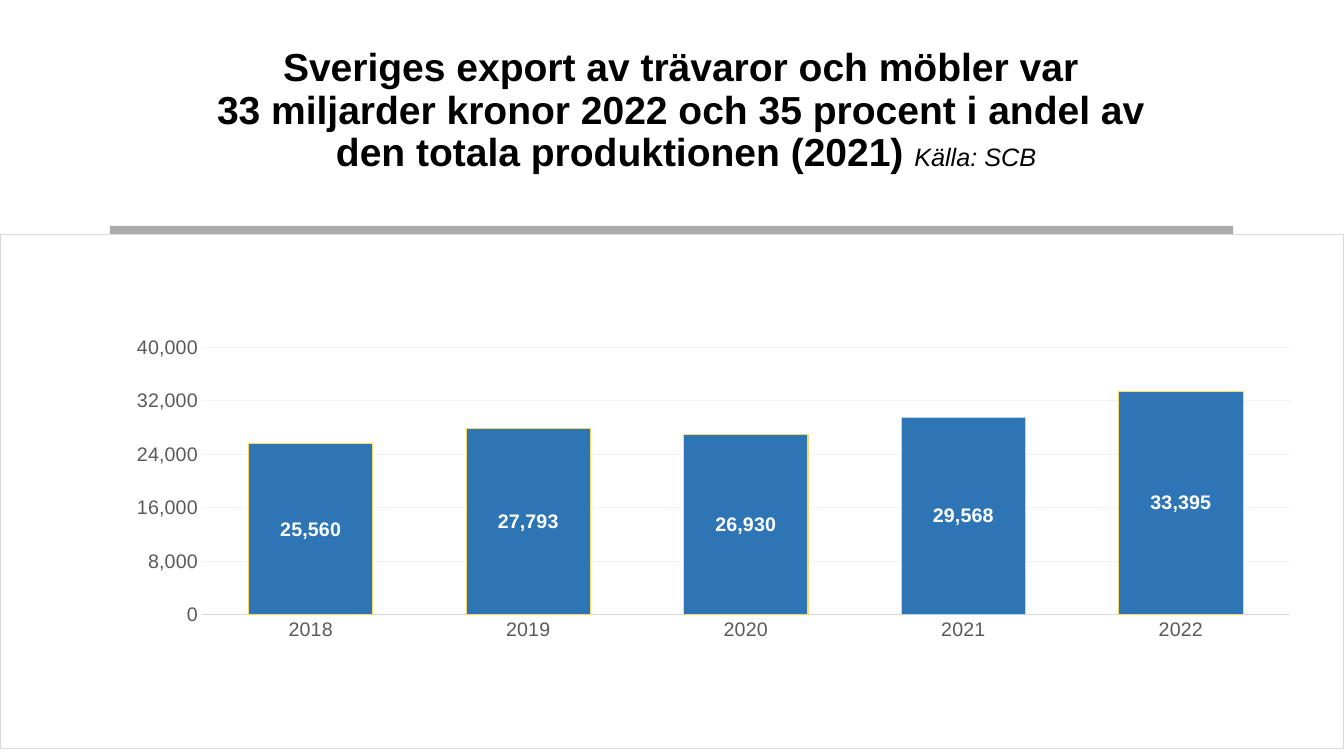
"""Build a slide on Swedish exports of wood products and furniture, 2018-2022."""
from lxml import etree
from pptx import Presentation
from pptx.chart.data import CategoryChartData
from pptx.dml.color import RGBColor
from pptx.enum.chart import XL_CHART_TYPE, XL_LABEL_POSITION, XL_TICK_MARK
from pptx.enum.shapes import MSO_SHAPE
from pptx.enum.text import MSO_ANCHOR, PP_ALIGN
from pptx.oxml import parse_xml
from pptx.oxml.ns import nsdecls, qn
from pptx.util import Inches, Pt

COLUMNS = XL_CHART_TYPE.COLUMN_CLUSTERED
CENTER_LABEL = XL_LABEL_POSITION.CENTER
NO_TICK = XL_TICK_MARK.NONE
RECTANGLE = MSO_SHAPE.RECTANGLE
MIDDLE = MSO_ANCHOR.MIDDLE
CENTER = PP_ALIGN.CENTER

FONT = "Arial"
COLORS = {
    "black": "000000",
    "white": "FFFFFF",
    "rule": "808080",
    "label": "595959",
    "border": "D9D9D9",
    "grid": "F2F2F2",
    "bar": "2E75B6",
    "bar_line": "FFD966",
    "bar_line_2021": "BDD7EE",
}
EXPORTS = {"2018": 25560, "2019": 27793, "2020": 26930, "2021": 29568, "2022": 33395}
PLOT_SHARES = {"x": 0.15, "y": 0.22, "w": 0.81, "h": 0.52}


def format_font(font, size, color, bold=False, italic=False):
    font.name = FONT
    font.size = Pt(size)
    font.bold = bold
    font.italic = italic
    font.color.rgb = RGBColor.from_string(COLORS[color])


def format_line(line, color):
    line.color.rgb = RGBColor.from_string(COLORS[color])
    line.width = Pt(0.75)


presentation = Presentation()
presentation.slide_width = Inches(13.33)
presentation.slide_height = Inches(7.5)
width = presentation.slide_width
slide = presentation.slides.add_slide(presentation.slide_layouts[6])

title_box = slide.shapes.add_textbox(Inches(1.09), Inches(0.38), Inches(11.43), Inches(1.45))
title_frame = title_box.text_frame
title_frame.word_wrap = True
title_frame.vertical_anchor = MIDDLE
title = title_frame.paragraphs[0]
title.alignment = CENTER
title.line_spacing = 0.9
title_lines = [
    "Sveriges export av trävaror och möbler var ",
    "33 miljarder kronor 2022 och 35 procent i andel av ",
    "den totala produktionen (2021) ",
]
for number, line_text in enumerate(title_lines):
    if number:
        title.add_line_break()
    run = title.add_run()
    run.text = line_text
    format_font(run.font, 27.9, "black", bold=True)
source = title.add_run()
source.text = "Källa: SCB"
format_font(source.font, 18, "black", italic=True)

rule = slide.shapes.add_shape(RECTANGLE, Inches(1.09), Inches(2.24), Inches(11.14), Inches(0.09))
rule.shadow.inherit = False
rule.line.fill.background()
rule.fill.solid()
rule.fill.fore_color.rgb = RGBColor.from_string(COLORS["rule"])
rule_color = rule.fill._xPr.find(".//" + qn("a:srgbClr"))
etree.SubElement(rule_color, qn("a:alpha"), val="65000")

chart_data = CategoryChartData(number_format="#,##0")
chart_data.categories = list(EXPORTS)
chart_data.add_series("Series 1", list(EXPORTS.values()))
chart = slide.shapes.add_chart(
    COLUMNS, 0, Inches(2.32), width, Inches(5.11), chart_data
).chart
chart.has_title = False
chart.has_legend = False
format_font(chart.font, 9, "black")

for axis in (chart.category_axis, chart.value_axis):
    axis.major_tick_mark = NO_TICK
    axis.minor_tick_mark = NO_TICK
    format_font(axis.tick_labels.font, 14, "label")
format_line(chart.category_axis.format.line, "border")

value_axis = chart.value_axis
value_axis.minimum_scale = 0
value_axis.maximum_scale = 40000
value_axis.major_unit = 8000
value_axis.format.line.fill.background()
value_axis.tick_labels.number_format = "#,##0"
value_axis.tick_labels.number_format_is_linked = False
format_line(value_axis.major_gridlines.format.line, "grid")

plot = chart.plots[0]
plot.gap_width = 75
plot.overlap = 100
plot.vary_by_categories = False
bars = plot.series[0]
bars.format.fill.solid()
bars.format.fill.fore_color.rgb = RGBColor.from_string(COLORS["bar"])
format_line(bars.format.line, "bar_line")
bar_2021 = bars.points[list(EXPORTS).index("2021")]
bar_2021.format.fill.solid()
bar_2021.format.fill.fore_color.rgb = RGBColor.from_string(COLORS["bar"])
format_line(bar_2021.format.line, "bar_line_2021")

labels = bars.data_labels
labels.show_value = True
labels.position = CENTER_LABEL
labels.number_format = "#,##0"
labels.number_format_is_linked = False
format_font(labels.font, 14, "white", bold=True)

chart_element = chart._chartSpace.find(qn("c:chart"))
chart_element.addnext(parse_xml(
    f'<c:spPr {nsdecls("c", "a")}>'
    f'<a:solidFill><a:srgbClr val="{COLORS["white"]}"/></a:solidFill>'
    f'<a:ln w="{Pt(0.75)}"><a:solidFill><a:srgbClr val="{COLORS["border"]}"/></a:solidFill></a:ln>'
    "</c:spPr>"
))

plot_area = chart_element.find(qn("c:plotArea"))
for automatic_layout in plot_area.findall(qn("c:layout")):
    plot_area.remove(automatic_layout)
modes = '<c:xMode val="edge"/><c:yMode val="edge"/>'
shares = "".join(f'<c:{side} val="{share}"/>' for side, share in PLOT_SHARES.items())
plot_area.insert(0, parse_xml(
    f'<c:layout {nsdecls("c")}><c:manualLayout><c:layoutTarget val="inner"/>'
    f"{modes}{shares}</c:manualLayout></c:layout>"
))

presentation.save("out.pptx")
